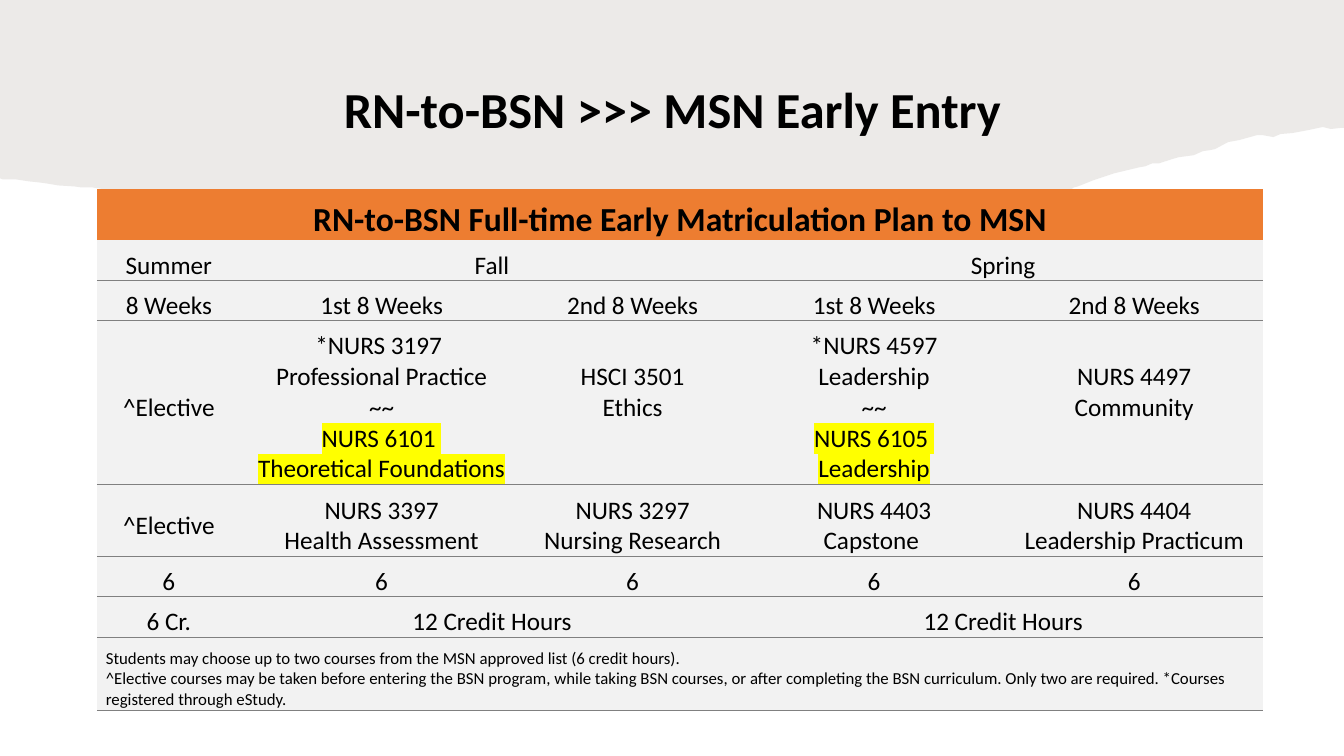
"""Build the early entry plan slide: title, torn paper band and course table."""
import dataclasses
import typing

import lxml.etree
import pptx
import pptx.dml.color
import pptx.enum.text
import pptx.oxml.ns
import pptx.util

SCALE = 9144
FONT = "Calibri"
BLACK, ORANGE, PALE, GREY, YELLOW = "000000", "ED7D31", "F2F2F2", "808080", "FFFF00"
NO_STYLE = "{2D5ABB26-0587-4C30-8999-92F81FD0307C}"
ALIGN = pptx.enum.text.PP_ALIGN
ANCHOR = pptx.enum.text.MSO_ANCHOR

EDGE = [
    (0, 0), (1333, 0), (1333, 127), (1329, 127), (1320, 128), (1312, 126), (1298, 129),
    (1282, 132), (1270, 133), (1263, 136), (1252, 134), (1247, 134), (1229, 139),
    (1218, 141), (1205, 148), (1200, 149), (1193, 150), (1184, 154), (1169, 156),
    (1162, 158), (1150, 162), (1143, 162), (1136, 165), (1130, 166), (1105, 172),
    (1084, 179), (1069, 185), (1065, 186), (1061, 189), (1046, 190), (1031, 193),
    (1009, 197), (977, 200), (942, 203), (913, 204), (899, 206), (882, 210),
    (847, 214), (832, 216), (815, 214), (787, 214), (759, 216), (735, 219),
    (716, 221), (691, 223), (674, 224), (665, 228), (656, 226), (636, 227),
    (618, 224), (598, 221), (575, 223), (544, 222), (500, 220), (477, 217),
    (452, 214), (434, 211), (410, 207), (386, 206), (355, 203), (343, 205),
    (311, 209), (281, 212), (254, 212), (229, 209), (205, 206), (189, 201),
    (164, 197), (152, 192), (144, 189), (131, 189), (120, 188), (105, 188),
    (92, 186), (81, 186), (74, 185), (58, 184), (46, 182), (39, 181), (29, 180),
    (16, 178), (3, 178), (0, 177),
]


@dataclasses.dataclass
class Cell:
    """One table cell; lines from index mark onward are highlighted."""
    text: str
    span: int = 1
    mark: int = 99
    top: int = 10


@dataclasses.dataclass
class Row:
    """One table row with its height and text format."""
    high: int
    cells: list[Cell]
    fill: str = PALE
    size: int = 18
    bold: bool = False
    align: typing.Any = ALIGN.CENTER


COLS = [143, 279, 219, 260, 256]
ROWS = [
    Row(50, [Cell("RN-to-BSN Full-time Early Matriculation Plan to MSN", 5)],
        ORANGE, 24, True),
    Row(40, [Cell("Summer"), Cell("Fall", 2), Cell("Spring", 2)]),
    Row(40, [Cell("8 Weeks")] + [Cell("1st 8 Weeks"), Cell("2nd 8 Weeks")] * 2),
    Row(163, [
        Cell("^Elective"),
        Cell("*NURS 3197 \nProfessional Practice\n~~\nNURS 6101 \nTheoretical Foundations",
             mark=3),
        Cell("HSCI 3501\nEthics", top=41),
        Cell("*NURS 4597\nLeadership\n~~\nNURS 6105 \nLeadership", mark=3),
        Cell("NURS 4497\nCommunity", top=41)]),
    Row(71, [
        Cell("^Elective"),
        Cell("NURS 3397\nHealth Assessment"),
        Cell("NURS 3297\nNursing Research"),
        Cell("NURS 4403\nCapstone "),
        Cell("NURS 4404\nLeadership Practicum")]),
    Row(40, [Cell("6")] * 5),
    Row(40, [Cell("6 Cr."), Cell("12 Credit Hours", 2), Cell("12 Credit Hours", 2)]),
    Row(73, [Cell(
        "Students may choose up to two courses from the MSN approved list (6 credit hours).\n"
        "^Elective courses may be taken before entering the BSN program, while taking BSN "
        "courses, or after completing the BSN curriculum. Only two are required. *Courses "
        "registered through eStudy. ", 5)], size=12, align=ALIGN.LEFT),
]


def px(num: int) -> int:
    """Turn px into EMU."""
    return pptx.util.Emu(num * SCALE)


def hue(code: str) -> pptx.dml.color.RGBColor:
    """Turn a hex string into a colour."""
    return pptx.dml.color.RGBColor.from_string(code)


def node(name: str, **attrs: str) -> typing.Any:
    """Make a drawing element."""
    return lxml.etree.Element(pptx.oxml.ns.qn(name), attrs)


def write(frame: typing.Any, text: str, *, size: int, bold: bool = False,
          align: typing.Any = ALIGN.CENTER, mark: int = 99, space: float = 1.0) -> None:
    """Fill a text frame, one paragraph per line."""
    for idx, line in enumerate(text.split("\n")):
        para = frame.add_paragraph() if idx else frame.paragraphs[0]
        para.alignment = align
        para.line_spacing = space
        run = para.add_run()
        run.text = line
        font = run.font
        font.name, font.size, font.bold = FONT, pptx.util.Pt(size), bold
        font.color.rgb = hue(BLACK)
        if idx >= mark:
            glow = node("a:highlight")
            glow.append(node("a:srgbClr", val=YELLOW))
            run._r.rPr.find(pptx.oxml.ns.qn("a:solidFill")).addnext(glow)


def band(slide: typing.Any) -> None:
    """Draw the torn paper band."""
    pen = slide.shapes.build_freeform(*EDGE[0], scale=SCALE)
    pen.add_line_segments(EDGE[1:], close=True)
    shape = pen.convert_to_shape()
    shape.shadow.inherit = False
    shape.line.fill.background()
    shape.fill.solid()
    shape.fill.fore_color.rgb = hue("82766A")
    tone = shape._element.spPr.find(".//" + pptx.oxml.ns.qn("a:srgbClr"))
    tone.append(node("a:alpha", val="15000"))


def title(slide: typing.Any) -> None:
    """Write the slide title."""
    frame = slide.shapes.add_textbox(px(91), px(54), px(1152), px(89)).text_frame
    frame.word_wrap = True
    frame.vertical_anchor = ANCHOR.BOTTOM
    write(frame, "RN-to-BSN >>> MSN Early Entry", size=36, bold=True, space=0.9)


def rule(cell: typing.Any, side: str) -> None:
    """Add a thin grey border to a cell."""
    line = node(f"a:ln{side}", w=str(pptx.util.Pt(0.75)))
    fill = node("a:solidFill")
    fill.append(node("a:srgbClr", val=GREY))
    line.append(fill)
    props = cell._tc.get_or_add_tcPr()
    props.insert(0, line)


def plan(slide: typing.Any) -> None:
    """Draw the course table."""
    high = sum(row.high for row in ROWS)
    table = slide.shapes.add_table(
        len(ROWS), len(COLS), px(96), px(188), px(sum(COLS)), px(high)).table
    table.first_row = table.horz_banding = False
    table._tbl.tblPr.find(pptx.oxml.ns.qn("a:tableStyleId")).text = NO_STYLE
    for col, wide in zip(table.columns, COLS):
        col.width = px(wide)
    for idx, row in enumerate(ROWS):
        table.rows[idx].height = px(row.high)
        for cell in table.rows[idx].cells:
            cell.fill.solid()
            cell.fill.fore_color.rgb = hue(row.fill)
            if idx:
                rule(cell, "B")
            if idx > 1:
                rule(cell, "T")
        left = 0
        for item in row.cells:
            cell = table.cell(idx, left)
            if item.span > 1:
                cell.merge(table.cell(idx, left + item.span - 1))
            cell.margin_left = cell.margin_right = px(9)
            cell.margin_top, cell.margin_bottom = px(item.top), 0
            cell.vertical_anchor = ANCHOR.TOP if left else ANCHOR.MIDDLE
            write(cell.text_frame, item.text, size=row.size, bold=row.bold,
                  align=row.align, mark=item.mark)
            left += item.span


def main() -> None:
    """Build and save the deck."""
    deck = pptx.Presentation()
    deck.slide_width, deck.slide_height = px(1333), px(750)
    slide = deck.slides.add_slide(deck.slide_layouts[6])
    band(slide)
    title(slide)
    plan(slide)
    deck.save("out.pptx")


if __name__ == "__main__":
    main()
